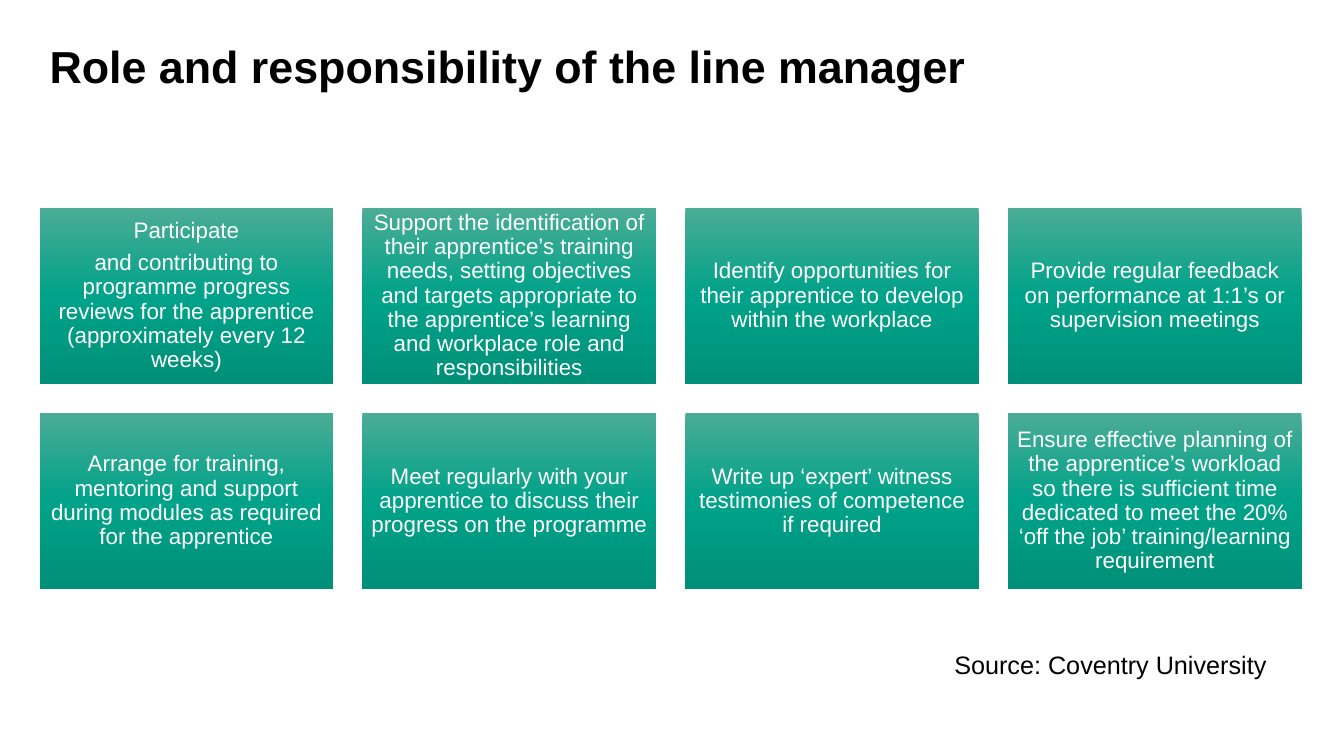
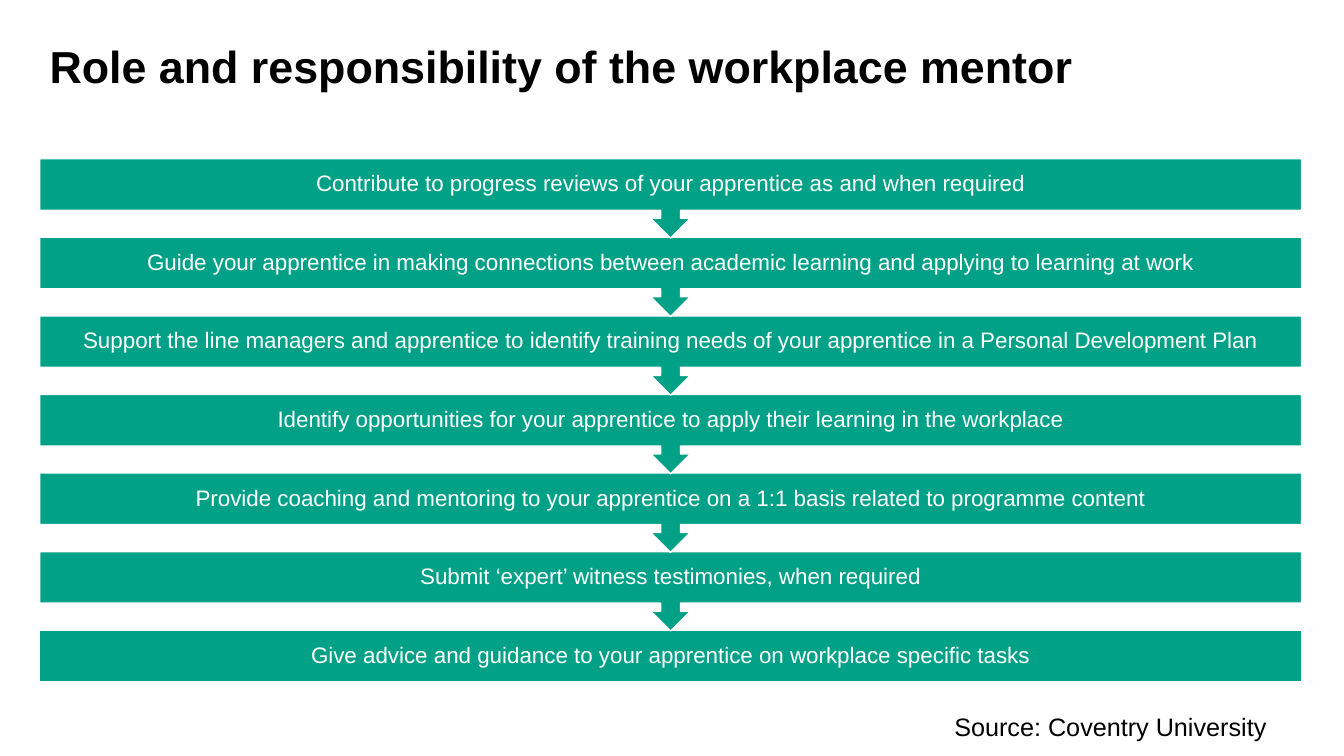
from copy import deepcopy

from pptx import Presentation
from pptx.dml.color import RGBColor
from pptx.enum.shapes import MSO_SHAPE as Shape
from pptx.enum.text import MSO_ANCHOR as Anchor, PP_ALIGN as Align
from pptx.oxml.ns import qn
from pptx.util import Cm, Pt

COLOURS = {
    "text": "000000",
    "white": "FFFFFF",
    "bar": "01A188",
    "tile_top": "4BAC96",
    "tile_middle": "00A289",
    "tile_bottom": "009079",
}
FONT = "Arial"
MARGIN, CONTENT_WIDTH = 1, 31.8

MANAGER_DUTIES = [
    ["Participate",
     "and contributing to programme progress reviews for the apprentice "
     "(approximately every 12 weeks)"],
    ["Support the identification of their apprentice’s training needs, setting "
     "objectives and targets appropriate to the apprentice’s learning and "
     "workplace role and responsibilities"],
    ["Identify opportunities for their apprentice to develop within the workplace"],
    ["Provide regular feedback on performance at 1:1’s or supervision meetings"],
    ["Arrange for training, mentoring and support during modules as required "
     "for the apprentice"],
    ["Meet regularly with your apprentice to discuss their progress on the programme"],
    ["Write up ‘expert’ witness testimonies of competence if required"],
    ["Ensure effective planning of the apprentice’s workload so there is "
     "sufficient time dedicated to meet the 20% ‘off the job’ "
     "training/learning requirement"],
]

MENTOR_DUTIES = [
    "Contribute to progress reviews of your apprentice as and when required",
    "Guide your apprentice in making connections between academic learning and "
    "applying to learning at work",
    "Support the line managers and apprentice to identify training needs of your "
    "apprentice in a Personal Development Plan",
    "Identify opportunities for your apprentice to apply their learning in the workplace",
    "Provide coaching and mentoring to your apprentice on a 1:1 basis related to "
    "programme content",
    "Submit ‘expert’ witness testimonies, when required",
    "Give advice and guidance to your apprentice on workplace specific tasks",
]


def colour(name):
    return RGBColor.from_string(COLOURS[name])


class DutyDeck:
    """Holds the shared style and the slide being filled."""

    def __init__(self):
        self.deck = Presentation()
        self.deck.slide_width, self.deck.slide_height = Cm(33.87), Cm(19.05)
        self.slide = None

    def add_slide(self, title):
        self.slide = self.deck.slides.add_slide(self.deck.slide_layouts[6])
        para = self.add_label(title, MARGIN, 1, CONTENT_WIDTH, 2.34, 32)
        para.font.bold = True
        para.line_spacing = 0.9

    def add_label(self, text, left, top, width, height, size):
        box = self.slide.shapes.add_textbox(Cm(left), Cm(top), Cm(width), Cm(height))
        box.text_frame.word_wrap = True
        box.text_frame.text = text
        para = box.text_frame.paragraphs[0]
        self.style_font(para, size, "text")
        return para

    def add_source(self, top):
        self.add_label("Source: Coventry University", 23.8, top, 9, 1.02, 18)

    def add_panel(self, kind, lines, left, top, width, height, inset):
        """Add a shape with centred white text."""
        panel = self.slide.shapes.add_shape(
            kind, Cm(left), Cm(top), Cm(width), Cm(height))
        panel.shadow.inherit = False
        frame = panel.text_frame
        frame.word_wrap = True
        frame.vertical_anchor = Anchor.MIDDLE
        frame.margin_left = frame.margin_right = Cm(inset)
        frame.margin_top = frame.margin_bottom = Cm(inset)
        frame.text = "\n".join(lines)
        for para in frame.paragraphs:
            para.alignment = Align.CENTER
            para.line_spacing = 0.9
            para.space_after = Pt(5.6)
            self.style_font(para, 16, "white")
        return panel

    def add_tile(self, lines, left, top, width, height):
        tile = self.add_panel(Shape.RECTANGLE, lines, left, top, width, height, 0.18)
        tile.line.fill.background()
        tile.fill.gradient()
        tile.fill.gradient_angle = 270
        first_stop = next(tile._element.spPr.iter(qn("a:gs")))
        first_stop.addnext(deepcopy(first_stop))
        names = ["tile_top", "tile_middle", "tile_bottom"]
        for index, (stop, name) in enumerate(zip(tile.fill.gradient_stops, names)):
            stop.position = index / 2
            stop.color.rgb = colour(name)

    def add_bar(self, text, top, has_arrow):
        kind, height = (Shape.DOWN_ARROW_CALLOUT, 2) if has_arrow else (Shape.RECTANGLE, 1.3)
        bar = self.add_panel(kind, [text], MARGIN, top, CONTENT_WIDTH, height, 0.3)
        bar.fill.solid()
        bar.fill.fore_color.rgb = colour("bar")
        bar.line.color.rgb = colour("white")
        bar.line.width = Pt(1)

    @staticmethod
    def style_font(para, size, name):
        for span in para.runs:
            span.font.name = FONT
            span.font.size = Pt(size)
            span.font.color.rgb = colour(name)


def add_manager_slide(duties):
    duties.add_slide("Role and responsibility of the line manager")
    columns, gap, height = 4, 0.74, 4.43
    width = (CONTENT_WIDTH - (columns - 1) * gap) / columns
    for index, lines in enumerate(MANAGER_DUTIES):
        row, column = divmod(index, columns)
        duties.add_tile(lines, MARGIN + column * (width + gap),
                        5.24 + row * (height + gap), width, height)
    duties.add_source(16.23)


def add_mentor_slide(duties):
    duties.add_slide("Role and responsibility of the workplace mentor")
    last = len(MENTOR_DUTIES) - 1
    # Bottom bar first, so that each arrow tip lies over the bar below it.
    for index in range(last, -1, -1):
        duties.add_bar(MENTOR_DUTIES[index], 4 + index * 1.98, index < last)
    duties.add_source(17.8)


def main():
    duties = DutyDeck()
    add_manager_slide(duties)
    add_mentor_slide(duties)
    duties.deck.save("out.pptx")


if __name__ == "__main__":
    main()
